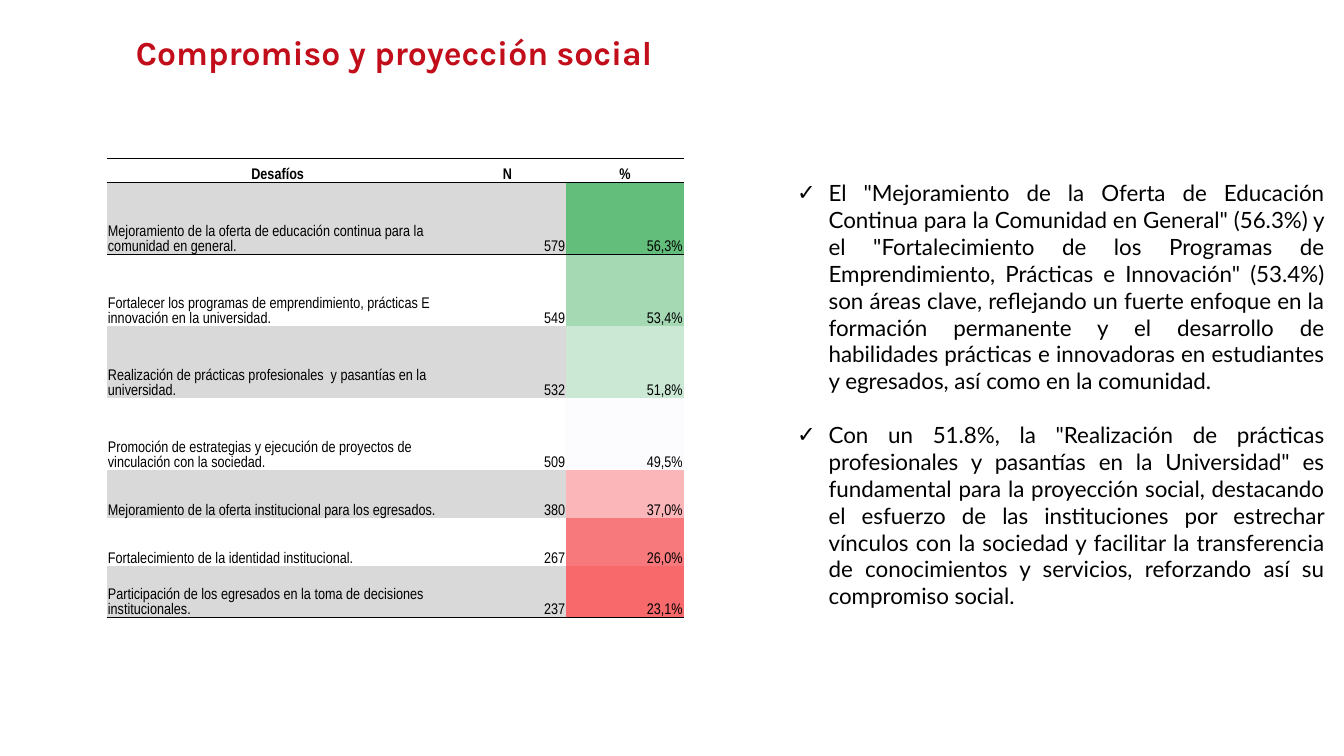
from lxml.etree import SubElement
from pptx import Presentation
from pptx.dml.color import RGBColor
from pptx.enum.text import MSO_ANCHOR as Anchor, PP_ALIGN as Align
from pptx.oxml.ns import qn
from pptx.util import Pt

BLACK = RGBColor(0x00, 0x00, 0x00)
RED = RGBColor(0xC2, 0x0E, 0x1A)
GREY = RGBColor(0xD9, 0xD9, 0xD9)
NO_TABLE_STYLE = "{2D5ABB26-0587-4C30-8999-92F81FD0307C}"

HEADINGS = ["Desafíos", "N", "%"]
HEADING_HEIGHT = 17.4
COLUMN_WIDTHS = [244, 84, 84]
# Challenge, count, share, colour of the share, row height
CHALLENGES = [
    ("Mejoramiento de la oferta de educación continua para la comunidad en general.",
     "579", "56,3%", RGBColor(0x63, 0xBE, 0x7B), 51.4),
    ("Fortalecer los programas de emprendimiento, prácticas E innovación en la universidad.",
     "549", "53,4%", RGBColor(0xA5, 0xD9, 0xB4), 51.4),
    ("Realización de prácticas profesionales  y pasantías en la universidad.",
     "532", "51,8%", RGBColor(0xCA, 0xE8, 0xD4), 51.4),
    ("Promoción de estrategias y ejecución de proyectos de vinculación con la sociedad.",
     "509", "49,5%", RGBColor(0xFC, 0xFC, 0xFF), 51.4),
    ("Mejoramiento de la oferta institucional para los egresados.",
     "380", "37,0%", RGBColor(0xFA, 0xB6, 0xB8), 34.3),
    ("Fortalecimiento de la identidad institucional.",
     "267", "26,0%", RGBColor(0xF8, 0x79, 0x7B), 34.3),
    ("Participación de los egresados en la toma de decisiones institucionales.",
     "237", "23,1%", RGBColor(0xF8, 0x69, 0x6B), 36.5),
]
FINDINGS = [
    'El "Mejoramiento de la Oferta de Educación Continua para la Comunidad en General" (56.3%) '
    'y el "Fortalecimiento de los Programas de Emprendimiento, Prácticas e Innovación" (53.4%) '
    "son áreas clave, reflejando un fuerte enfoque en la formación permanente y el desarrollo de "
    "habilidades prácticas e innovadoras en estudiantes y egresados, así como en la comunidad.",
    'Con un 51.8%, la "Realización de prácticas profesionales y pasantías en la Universidad" es '
    "fundamental para la proyección social, destacando el esfuerzo de las instituciones por "
    "estrechar vínculos con la sociedad y facilitar la transferencia de conocimientos y servicios, "
    "reforzando así su compromiso social.",
]


class SlideBuilder:
    title_font, table_font, body_font = "Karla", "Arial Narrow", "Lato"
    title_size, table_size, body_size = 24, 11, 16
    bullet_indent = 22.5

    def __init__(self, page):
        self.page = page

    def add_span(self, para, text, font, size, color=BLACK, bold=False):
        span = para.add_run()
        span.text = text
        span.font.name, span.font.size, span.font.bold = font, Pt(size), bold
        span.font.color.rgb = color

    def text_box(self, left, top, width, height):
        box = self.page.shapes.add_textbox(Pt(left), Pt(top), Pt(width), Pt(height))
        box.text_frame.word_wrap = True
        return box.text_frame

    def title(self, text, *place):
        para = self.text_box(*place).paragraphs[0]
        self.add_span(para, text, self.title_font, self.title_size, RED, True)

    def check_list(self, items, gap, *place):
        frame = self.text_box(*place)
        for index, item in enumerate(items):
            para = frame.add_paragraph() if index else frame.paragraphs[0]
            para.alignment = Align.JUSTIFY
            if index:
                para.space_before = Pt(gap)
            properties = para._p.get_or_add_pPr()
            properties.set("marL", str(Pt(self.bullet_indent)))
            properties.set("indent", str(-Pt(self.bullet_indent)))
            SubElement(properties, qn("a:buFont"), typeface="Arial")
            SubElement(properties, qn("a:buChar"), char="✓")
            self.add_span(para, item, self.body_font, self.body_size)

    def cell(self, cell, text, align, bold, fill, edges):
        """Fill one table cell; edges names the borders to rule, as lnT or lnB."""
        cell.margin_left = cell.margin_right = cell.margin_top = Pt(0.7)
        cell.margin_bottom = Pt(0)
        cell.vertical_anchor = Anchor.BOTTOM
        for edge in edges:
            line = SubElement(cell._tc.get_or_add_tcPr(), qn(f"a:{edge}"), w=str(Pt(0.5)))
            paint = SubElement(line, qn("a:solidFill"))
            SubElement(paint, qn("a:srgbClr"), val=str(BLACK))
        if fill is None:
            cell.fill.background()
        else:
            cell.fill.solid()
            cell.fill.fore_color.rgb = fill
        para = cell.text_frame.paragraphs[0]
        para.alignment = align
        self.add_span(para, text, self.table_font, self.table_size, bold=bold)

    def challenge_table(self, left, top):
        heights = [HEADING_HEIGHT] + [challenge[-1] for challenge in CHALLENGES]
        table = self.page.shapes.add_table(
            len(heights), len(COLUMN_WIDTHS), Pt(left), Pt(top),
            Pt(sum(COLUMN_WIDTHS)), Pt(sum(heights))).table
        table.horz_banding = False
        table._tbl.tblPr.find(qn("a:tableStyleId")).text = NO_TABLE_STYLE
        for column, width in zip(table.columns, COLUMN_WIDTHS):
            column.width = Pt(width)
        for row, height in zip(table.rows, heights):
            row.height = Pt(height)
        for column, heading in enumerate(HEADINGS):
            self.cell(table.cell(0, column), heading, Align.CENTER, True, None, ["lnT", "lnB"])
        for row, (name, count, share, color, _) in enumerate(CHALLENGES, 1):
            band = GREY if row % 2 else None
            edges = {1: ["lnT"], len(CHALLENGES): ["lnB"]}.get(row, [])
            values = [(name, Align.LEFT, band), (count, Align.RIGHT, band),
                      (share, Align.RIGHT, color)]
            for column, (text, align, fill) in enumerate(values):
                self.cell(table.cell(row, column), text, align, False, fill, edges)


def main():
    deck = Presentation()
    deck.slide_width, deck.slide_height = Pt(960), Pt(540)
    builder = SlideBuilder(deck.slides.add_slide(deck.slide_layouts[6]))
    builder.title("Compromiso y proyección social", 90, 19.5, 664, 36)
    builder.challenge_table(76.4, 113)
    builder.check_list(FINDINGS, 19.2, 562.3, 124.6, 391, 317.5)
    deck.save("out.pptx")


if __name__ == "__main__":
    main()
